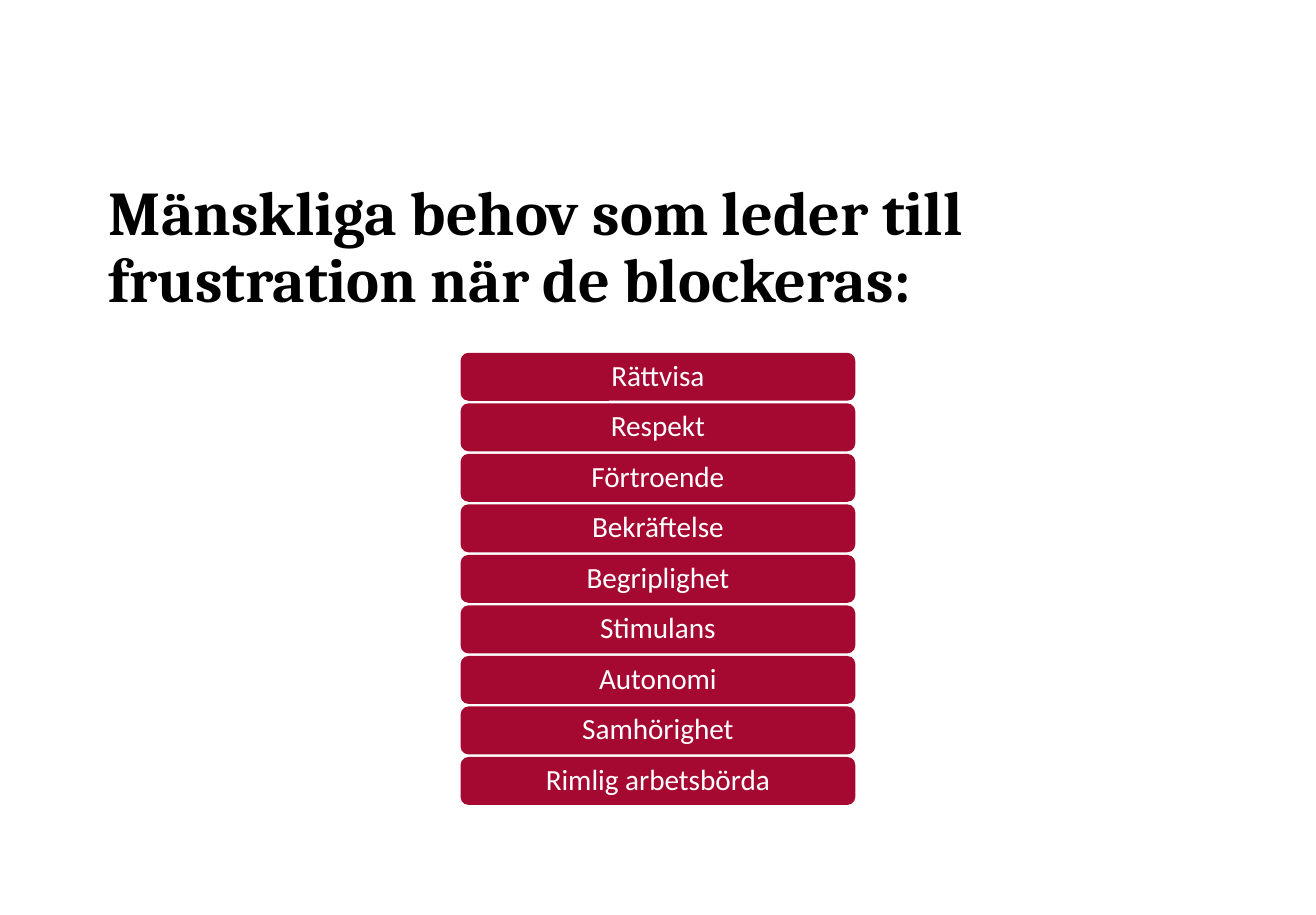
"""Build a slide listing human needs that cause frustration when blocked."""
from pptx import Presentation
from pptx.dml.color import RGBColor
from pptx.enum.shapes import MSO_SHAPE
from pptx.enum.text import MSO_ANCHOR, PP_ALIGN
from pptx.util import Inches, Pt

RED = RGBColor(0xA5, 0x09, 0x32)
WHITE = RGBColor(0xFF, 0xFF, 0xFF)
BLACK = RGBColor(0x00, 0x00, 0x00)

NEEDS = [
    "Rättvisa", "Respekt", "Förtroende", "Bekräftelse", "Begriplighet",
    "Stimulans", "Autonomi", "Samhörighet", "Rimlig arbetsbörda",
]
WIDE, SPAN = 10, 8.35
TOP, LAST = 2.68, 5.75
STEP = (LAST - TOP) / (len(NEEDS) - 1)
HIGH = STEP * 0.95


def assign(target, values):
    for name, value in values.items():
        setattr(target, name, value)


def write(shape, text, color, frame, para, font):
    box = shape.text_frame
    box.text = text
    assign(box, frame)
    line = box.paragraphs[0]
    assign(line, para)
    assign(line.font, font)
    line.font.color.rgb = color


deck = Presentation()
assign(deck, {"slide_width": Inches(WIDE), "slide_height": Inches(6.95)})
slide = deck.slides.add_slide(deck.slide_layouts[5])

title = slide.shapes.title
assign(title, {"left": Inches((WIDE - SPAN) / 2), "top": Inches(0.84),
               "width": Inches(SPAN), "height": Inches(1.56)})
write(
    title, "Mänskliga behov som leder till frustration när de blockeras:", BLACK,
    {"vertical_anchor": MSO_ANCHOR.BOTTOM, "word_wrap": True,
     "margin_left": 0, "margin_right": 0, "margin_top": 0, "margin_bottom": 0},
    {"alignment": PP_ALIGN.LEFT, "line_spacing": 0.9, "space_before": Pt(0)},
    {"name": "Cambria", "size": Pt(34), "bold": True},
)

for row, need in enumerate(NEEDS):
    bar = slide.shapes.add_shape(
        MSO_SHAPE.ROUNDED_RECTANGLE,
        Inches(3.5), Inches(TOP + row * STEP), Inches(3), Inches(HIGH))
    bar.shadow.inherit = False
    bar.fill.solid()
    bar.fill.fore_color.rgb = RED
    bar.line.fill.background()
    write(
        bar, need, WHITE,
        {"vertical_anchor": MSO_ANCHOR.MIDDLE, "word_wrap": True,
         "margin_left": Inches(0.07), "margin_right": Inches(0.07),
         "margin_top": Inches(0.03), "margin_bottom": Inches(0.03)},
        {"alignment": PP_ALIGN.CENTER, "line_spacing": 0.9},
        {"name": "Calibri", "size": Pt(16)},
    )

deck.save("out.pptx")
